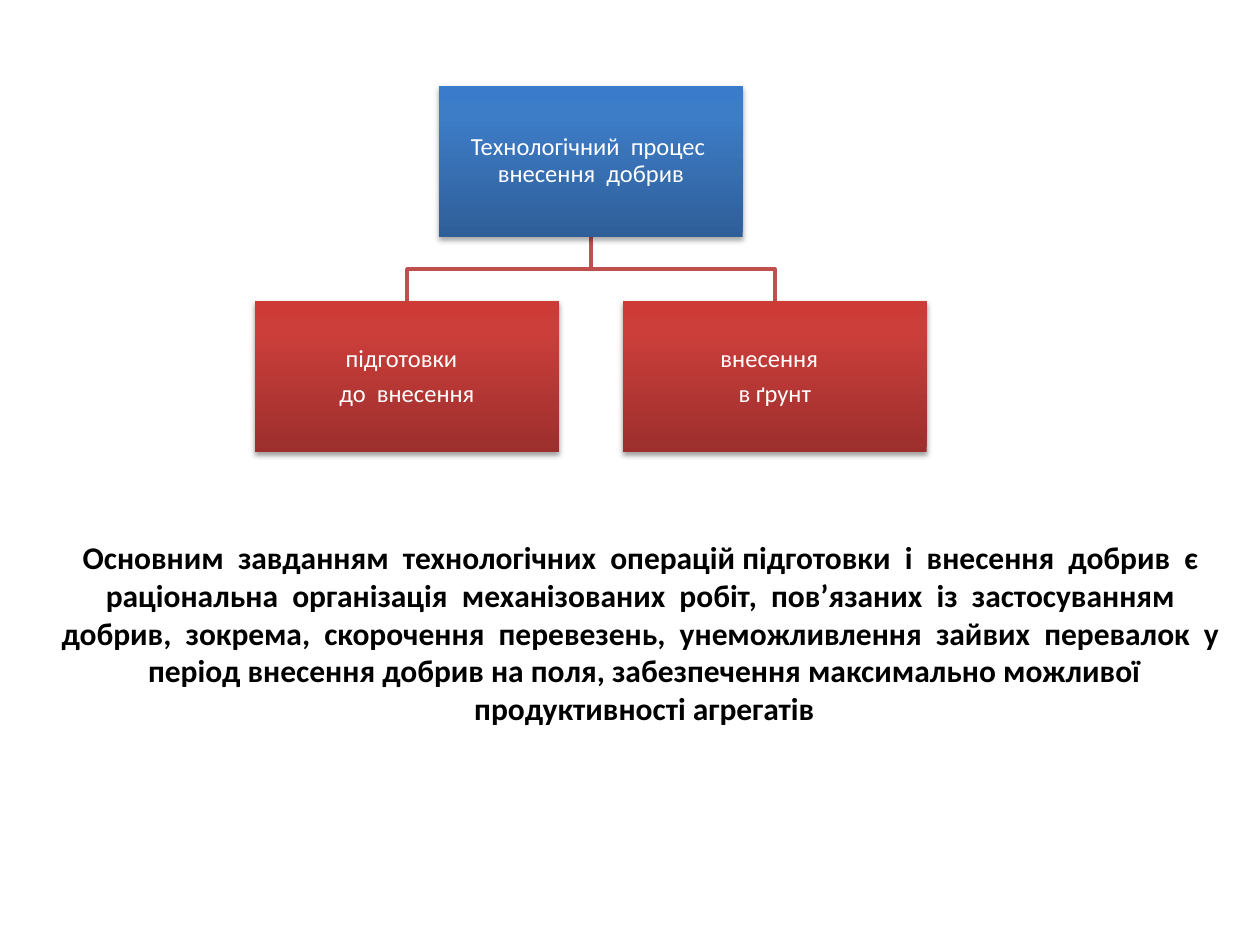
from dataclasses import dataclass

from lxml.etree import SubElement
from pptx import Presentation
from pptx.dml.color import RGBColor
from pptx.enum.shapes import MSO_SHAPE
from pptx.enum.text import MSO_ANCHOR, MSO_AUTO_SIZE, PP_ALIGN
from pptx.oxml.ns import qn
from pptx.slide import Slide
from pptx.util import Inches, Pt

WHITE = RGBColor(0xFF, 0xFF, 0xFF)
BLACK = RGBColor(0x00, 0x00, 0x00)
LINK_RED = RGBColor(0xC0, 0x50, 0x4D)
BLUES = (RGBColor(0x2F, 0x5F, 0x99), RGBColor(0x3D, 0x7C, 0xC7), RGBColor(0x3A, 0x7C, 0xCB))
REDS = (RGBColor(0x9C, 0x2F, 0x2D), RGBColor(0xCB, 0x3E, 0x3A), RGBColor(0xCE, 0x3B, 0x37))
STOPS = (0, 80, 100)

FONT = "Calibri"
BOX_WIDTH, BOX_HEIGHT = 2.41, 1.2
GAP = 0.51
ROOT_CENTER, ROOT_TOP = 4.69, 0.68
CHILD_OFFSET = (BOX_WIDTH + GAP) / 2
CHILD_TOP = ROOT_TOP + BOX_HEIGHT + GAP

SUMMARY = (
    "Основним  завданням  технологічних  операцій підготовки  і  внесення  добрив  є  "
    "раціональна  організація  механізованих  робіт,  пов’язаних  із  застосуванням  "
    "добрив,  зокрема,  скорочення  перевезень,  унеможливлення  зайвих  перевалок  у  "
    "період внесення добрив на поля, забезпечення максимально можливої "
    "продуктивності агрегатів"
)


@dataclass(frozen=True)
class Node:
    lines: tuple[str, ...]
    center: float
    top: float
    colors: tuple[RGBColor, ...]
    shadow_opacity: int
    shadow_distance: float


ROOT = Node(("Технологічний  процес  внесення  добрив",), ROOT_CENTER, ROOT_TOP, BLUES, 35, 1.8)
CHILDREN = (
    Node(("підготовки  ", "до  внесення"), ROOT_CENTER - CHILD_OFFSET, CHILD_TOP, REDS, 38, 1.6),
    Node(("внесення  ", "в ґрунт"), ROOT_CENTER + CHILD_OFFSET, CHILD_TOP, REDS, 38, 1.6),
)


def fill_gradient(shape, colors: tuple[RGBColor, ...]) -> None:
    """Fill from the bottom up, with one colour at each of STOPS."""
    shape.fill.gradient()
    shape.fill.gradient_angle = 90
    stop_list = shape.element.spPr.find(qn("a:gradFill")).find(qn("a:gsLst"))
    for stop in list(stop_list):
        stop_list.remove(stop)
    for position, color in zip(STOPS, colors):
        stop = SubElement(stop_list, qn("a:gs"), pos=str(position * 1000))
        SubElement(stop, qn("a:srgbClr"), val=str(color))


def add_shadow(shape, opacity: int, distance: float) -> None:
    shape.shadow.inherit = False
    effects = shape.element.spPr.find(qn("a:effectLst"))
    shadow = SubElement(
        effects, qn("a:outerShdw"), blurRad=str(Pt(3.1)), dist=str(Pt(distance)),
        dir="5400000", rotWithShape="0",
    )
    color = SubElement(shadow, qn("a:srgbClr"), val=str(BLACK))
    SubElement(color, qn("a:alpha"), val=str(opacity * 1000))


def format_paragraph(para, size: float, color: RGBColor, bold: bool = False) -> None:
    para.alignment = PP_ALIGN.CENTER
    para.font.name = FONT
    para.font.size = Pt(size)
    para.font.bold = bold
    para.font.color.rgb = color


def add_node(page: Slide, node: Node) -> None:
    box = page.shapes.add_shape(
        MSO_SHAPE.RECTANGLE, Inches(node.center - BOX_WIDTH / 2), Inches(node.top),
        Inches(BOX_WIDTH), Inches(BOX_HEIGHT),
    )
    fill_gradient(box, node.colors)
    box.line.fill.background()
    add_shadow(box, node.shadow_opacity, node.shadow_distance)
    frame = box.text_frame
    frame.word_wrap = True
    frame.vertical_anchor = MSO_ANCHOR.MIDDLE
    frame.margin_left = frame.margin_right = Inches(0.01)
    frame.margin_top = frame.margin_bottom = Inches(0.01)
    frame.text = "\n".join(node.lines)
    for para in frame.paragraphs:
        format_paragraph(para, 14, WHITE)
        para.line_spacing = 0.9
        para.space_after = Pt(4.9)


def add_link(page: Slide, parent: Node, child: Node) -> None:
    start = parent.top + BOX_HEIGHT
    middle = (start + child.top) / 2
    builder = page.shapes.build_freeform(Inches(parent.center), Inches(start))
    corners = ((parent.center, middle), (child.center, middle), (child.center, child.top))
    builder.add_line_segments([(Inches(x), Inches(y)) for x, y in corners], close=False)
    link = builder.convert_to_shape()
    link.fill.background()
    link.line.color.rgb = LINK_RED
    link.line.width = Pt(2)
    link.shadow.inherit = False


def add_summary(page: Slide) -> None:
    box = page.shapes.add_textbox(Inches(0.35), Inches(4.22), Inches(9.53), Inches(1.62))
    frame = box.text_frame
    frame.word_wrap = True
    frame.auto_size = MSO_AUTO_SIZE.SHAPE_TO_FIT_TEXT
    frame.text = SUMMARY
    format_paragraph(frame.paragraphs[0], 18, BLACK, bold=True)


def main() -> None:
    deck = Presentation()
    deck.slide_width, deck.slide_height = Inches(10), Inches(7.5)
    page = deck.slides.add_slide(deck.slide_layouts.get_by_name("Blank"))
    for child in reversed(CHILDREN):
        add_link(page, ROOT, child)
    for node in (ROOT, *CHILDREN):
        add_node(page, node)
    add_summary(page)
    deck.save("out.pptx")


if __name__ == "__main__":
    main()
